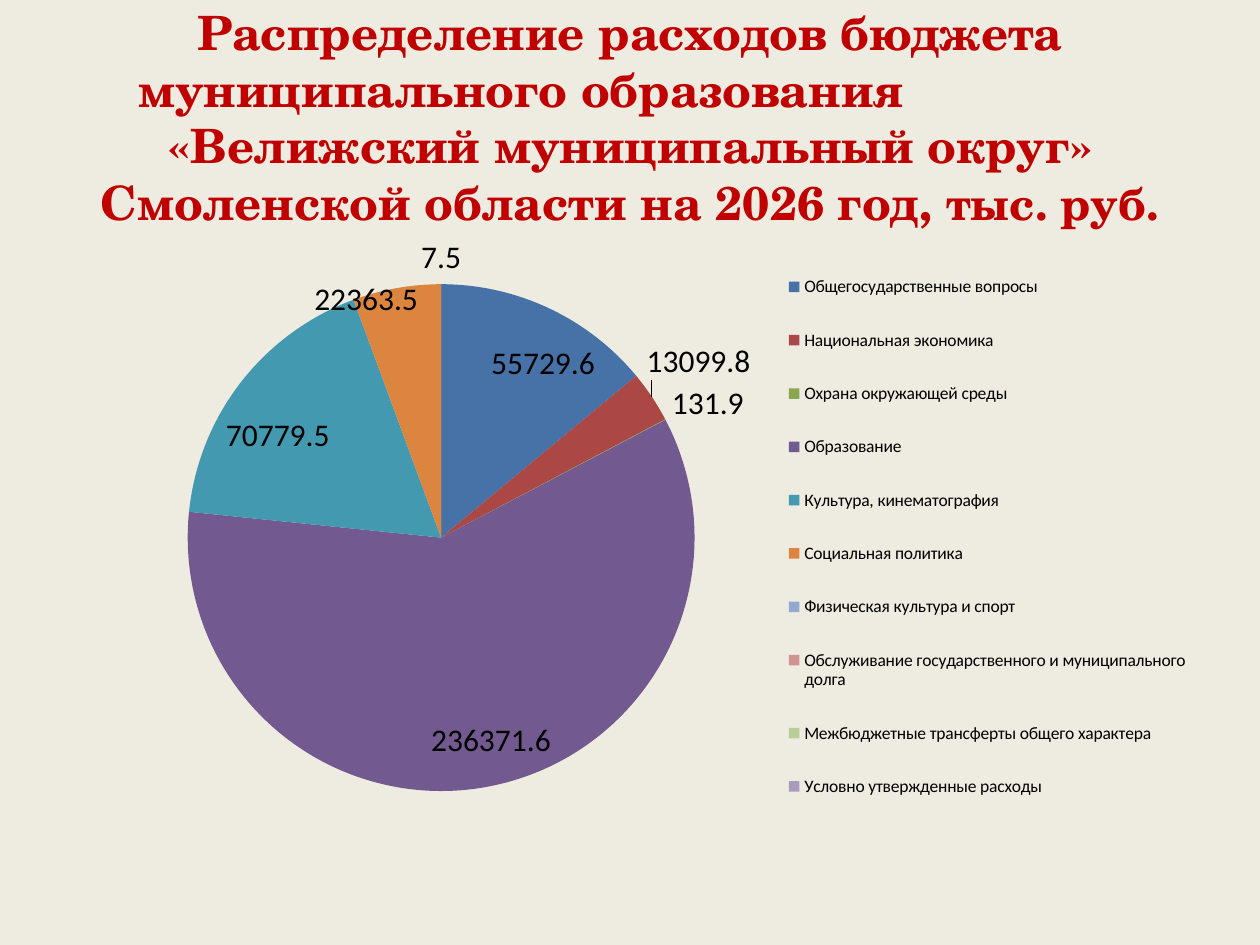
from lxml import etree
from pptx import Presentation
from pptx.chart.data import CategoryChartData
from pptx.dml.color import RGBColor
from pptx.enum.chart import XL_CHART_TYPE, XL_LABEL_POSITION, XL_LEGEND_POSITION
from pptx.enum.text import MSO_ANCHOR, PP_ALIGN
from pptx.oxml.ns import qn
from pptx.util import Emu, Pt

PIE = XL_CHART_TYPE.PIE
BEST_FIT = XL_LABEL_POSITION.BEST_FIT
OUTSIDE_END = XL_LABEL_POSITION.OUTSIDE_END
LEGEND_RIGHT = XL_LEGEND_POSITION.RIGHT
MIDDLE = MSO_ANCHOR.MIDDLE
CENTER = PP_ALIGN.CENTER

PX = 914400 // 126
BACKGROUND = RGBColor(0xEE, 0xEC, 0xE1)
TITLE_RED = RGBColor(0xC0, 0x00, 0x00)
BLACK = RGBColor(0x00, 0x00, 0x00)

# Title lines: runs of (text, size), and right indent in px
TITLE = [
    ([("Распределение расходов бюджета", 27)], 0),
    ([("муниципального образования", 27)], 218),
    ([("«Велижский муниципальный округ»", 27)], 0),
    ([("Смоленской области на 2026 год, ", 27), ("тыс. руб.", 26)], 0),
]

# Budget items: name, amount, slice colour
EXPENSES = [
    ("Общегосударственные вопросы", 55729.6, RGBColor(0x46, 0x72, 0xA8)),
    ("Национальная экономика", 13099.8, RGBColor(0xAB, 0x47, 0x44)),
    ("Охрана окружающей среды", 131.9, RGBColor(0x8A, 0xA6, 0x4F)),
    ("Образование", 236371.6, RGBColor(0x72, 0x59, 0x8F)),
    ("Культура, кинематография", 70779.5, RGBColor(0x43, 0x99, 0xB0)),
    ("Социальная политика", 22363.5, RGBColor(0xDC, 0x85, 0x3E)),
    ("Физическая культура и спорт", 0, RGBColor(0x93, 0xA9, 0xD0)),
    ("Обслуживание государственного и муниципального долга", 7.5,
     RGBColor(0xD1, 0x93, 0x92)),
    ("Межбюджетные трансферты общего характера", 0, RGBColor(0xB9, 0xCD, 0x96)),
    ("Условно утвержденные расходы", 0, RGBColor(0xA9, 0x9B, 0xBD)),
]
# Labels moved from their usual place, as shares of the chart size
LABEL_SHIFTS = {1: (-0.01, -0.02), 2: (0, 0.01), 5: (0.02, 0.06)}


def px(*lengths):
    return [Emu(length * PX) for length in lengths]


def add_text(paragraph, text, *, size, font, color, bold=False):
    run = paragraph.add_run()
    run.text = text
    run.font.size = Pt(size)
    run.font.name = font
    run.font.bold = bold
    run.font.color.rgb = color


def add_title(slide):
    shape = slide.shapes.add_textbox(*px(63, 38, 1134, 157))
    frame = shape.text_frame
    frame.word_wrap = True
    frame.vertical_anchor = MIDDLE
    for index, (runs, right_indent) in enumerate(TITLE):
        paragraph = frame.add_paragraph() if index else frame.paragraphs[0]
        paragraph.alignment = CENTER
        paragraph._p.get_or_add_pPr().set("marR", str(right_indent * PX))
        for text, size in runs:
            add_text(paragraph, text, size=size, font="TeX Gyre Schola",
                     color=TITLE_RED, bold=True)


def chart_element(tag, **values):
    element = etree.Element(qn("c:" + tag))
    for name, value in values.items():
        etree.SubElement(element, qn("c:" + name)).set("val", str(value))
    return element


def make_layout(**values):
    layout = chart_element("layout")
    layout.append(chart_element("manualLayout", **values))
    return layout


def replace_layout(parent, layout, before):
    for old in parent.findall(qn("c:layout")):
        parent.remove(old)
    parent.find(qn("c:" + before)).addprevious(layout)


def set_font(font, size):
    font.size = Pt(size)
    font.name = "Calibri"
    font.color.rgb = BLACK


def format_labels(series):
    labels = series.data_labels
    labels.show_value = True
    labels.position = BEST_FIT
    set_font(labels.font, 18)
    for index, (_, amount, _) in enumerate(EXPENSES):
        if amount and index not in LABEL_SHIFTS:
            continue
        series.points[index].data_label.position = OUTSIDE_END
        label = labels._element.xpath(f'c:dLbl[c:idx/@val="{index}"]')[0]
        if amount:
            x, y = LABEL_SHIFTS[index]
            label[0].addnext(make_layout(x=x, y=y))
        else:
            # Empty items carry no label
            for child in label[1:]:
                label.remove(child)
            etree.SubElement(label, qn("c:delete")).set("val", "1")
    for old in labels._element.findall(qn("c:showLeaderLines")):
        labels._element.remove(old)
    etree.SubElement(labels._element, qn("c:showLeaderLines")).set("val", "1")


def add_expense_chart(slide):
    data = CategoryChartData()
    data.categories = [name for name, _, _ in EXPENSES]
    data.add_series("Series 1", [amount for _, amount, _ in EXPENSES])
    chart = slide.shapes.add_chart(PIE, *px(63, 231, 1134, 624), data).chart
    chart.has_title = False
    set_font(chart.font, 18)

    # Slices and their values
    plot = chart.plots[0]
    plot.vary_by_categories = True
    series = plot.series[0]
    for index, (_, _, color) in enumerate(EXPENSES):
        fill = series.points[index].format.fill
        fill.solid()
        fill.fore_color.rgb = color
    format_labels(series)
    replace_layout(plot._element.getparent(), make_layout(
        layoutTarget="inner", xMode="edge", yMode="edge",
        x=0.11, y=0.085, w=0.447, h=0.813), "pieChart")

    # Legend
    chart.has_legend = True
    legend = chart.legend
    legend.position = LEGEND_RIGHT
    legend.include_in_layout = False
    set_font(legend.font, 10)
    replace_layout(legend._element, make_layout(
        xMode="edge", yMode="edge", x=0.63, y=0.02, w=0.37, h=0.94), "overlay")


def main():
    presentation = Presentation()
    presentation.slide_width, presentation.slide_height = px(1260, 945)
    slide = presentation.slides.add_slide(presentation.slide_layouts[6])
    background = slide.background.fill
    background.solid()
    background.fore_color.rgb = BACKGROUND
    add_title(slide)
    add_expense_chart(slide)
    presentation.save("out.pptx")


if __name__ == "__main__":
    main()
